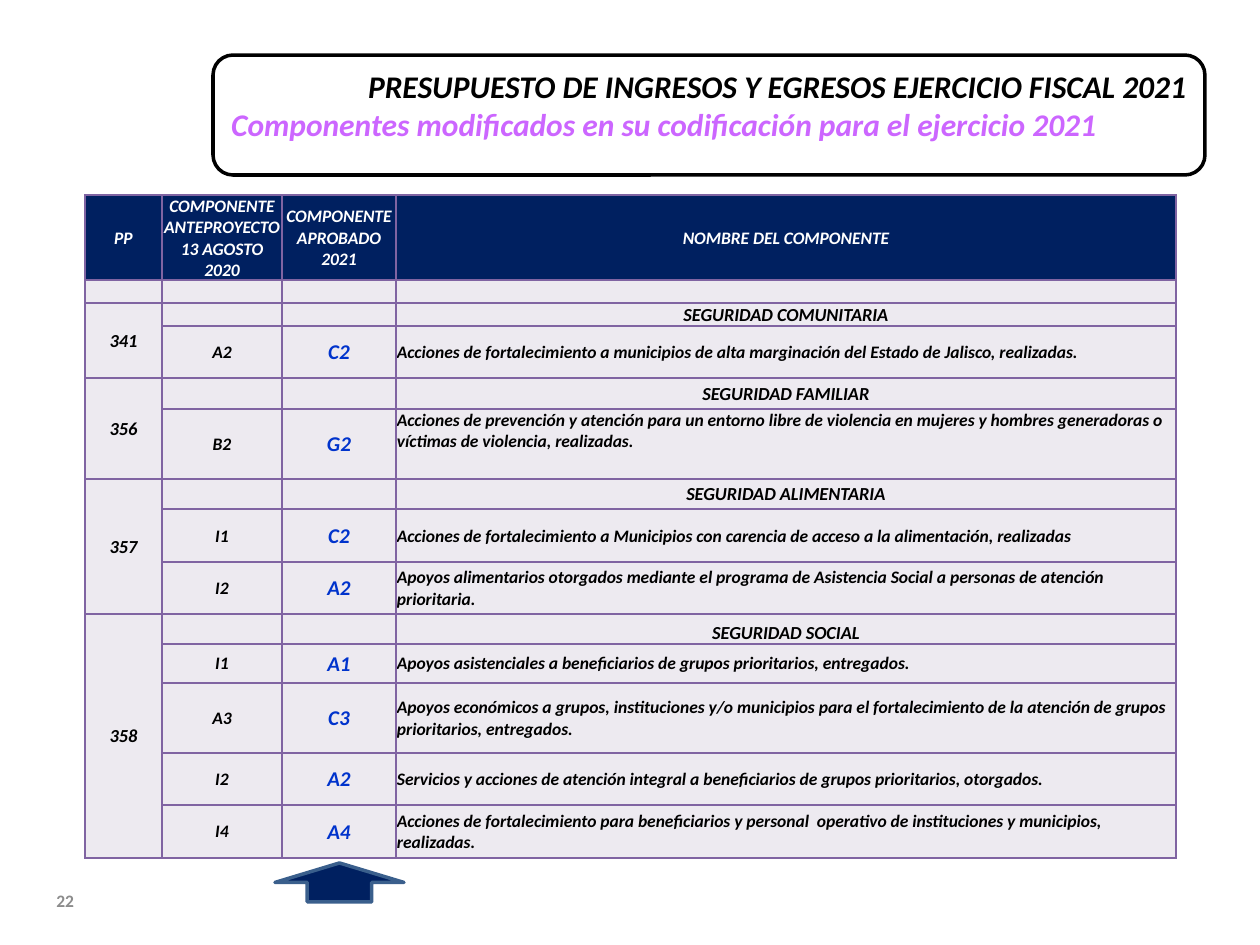
from dataclasses import dataclass

from lxml.etree import SubElement
from pptx import Presentation
from pptx.dml.color import RGBColor
from pptx.enum.shapes import MSO_SHAPE
from pptx.enum.text import MSO_ANCHOR, PP_ALIGN
from pptx.oxml.ns import qn
from pptx.util import Emu, Pt


@dataclass(frozen=True)
class Theme:
    font: str = "Calibri"
    navy: str = "002060"
    lilac: str = "EDEAF0"
    border: str = "8064A2"
    arrow_line: str = "3A5F8C"
    black: str = "000000"
    white: str = "FFFFFF"
    violet: str = "CC66FF"
    blue: str = "0033CC"
    gray: str = "8C8C8C"
    title_size: float = 18
    code_size: float = 12
    group_size: float = 10.5
    body_size: float = 10


def px(length):
    return Emu(round(length * 914400 / 126))


def rgb(value):
    return RGBColor.from_string(value)


class SlideBuilder:
    def __init__(self, page, theme):
        self.page = page
        self.theme = theme

    def style(self, para, size, color, align=PP_ALIGN.LEFT, italic=True):
        para.alignment = align
        for span in para.runs:
            font = span.font
            font.name, font.size = self.theme.font, Pt(size)
            font.bold, font.italic = True, italic
            font.color.rgb = rgb(color)

    def text(self, left, top, width, height, text, size, color):
        box = self.page.shapes.add_textbox(*map(px, (left, top, width, height)))
        frame = box.text_frame
        frame.word_wrap = True
        frame.vertical_anchor = MSO_ANCHOR.MIDDLE
        frame.text = text
        self.style(frame.paragraphs[0], size, color, italic=False)

    def shape(self, kind, left, top, width, height, line, fill=None):
        shape = self.page.shapes.add_shape(kind, *map(px, (left, top, width, height)))
        shape.shadow.inherit = False
        if fill:
            shape.fill.solid()
            shape.fill.fore_color.rgb = rgb(fill)
        else:
            shape.fill.background()
        shape.line.color.rgb = rgb(line)
        shape.line.width = Pt(2)
        return shape

    def title(self, left, top, width, height, lines):
        shape = self.shape(MSO_SHAPE.ROUNDED_RECTANGLE, left, top, width, height, self.theme.black)
        frame = shape.text_frame
        frame.word_wrap = True
        frame.vertical_anchor = MSO_ANCHOR.TOP
        frame.text = "\n".join(text for text, _, _ in lines)
        for para, (_, color, align) in zip(frame.paragraphs, lines):
            self.style(para, self.theme.title_size, color, align)

    def table(self, left, top, widths, heights):
        frame = self.page.shapes.add_table(
            len(heights), len(widths), px(left), px(top), px(sum(widths)), px(sum(heights)))
        table = frame.table
        table.first_row = table.horz_banding = False
        for column, width in zip(table.columns, widths):
            column.width = px(width)
        for row, height in zip(table.rows, heights):
            row.height = px(height)
            for cell in row.cells:
                self.plain_cell(cell)
        return table

    def plain_cell(self, cell):
        cell.margin_left = cell.margin_right = cell.margin_top = px(1)
        cell.margin_bottom = 0
        properties = cell._tc.get_or_add_tcPr()
        for side in ("lnL", "lnR", "lnT", "lnB"):
            line = SubElement(properties, qn(f"a:{side}"), w=str(Pt(1)))
            SubElement(SubElement(line, qn("a:solidFill")), qn("a:srgbClr"), val=self.theme.border)
        cell.fill.solid()
        cell.fill.fore_color.rgb = rgb(self.theme.lilac)
        # Keeps empty rows at their low height
        SubElement(cell.text_frame.paragraphs[0]._p, qn("a:endParaRPr"),
                   sz=str(int(self.theme.body_size * 100)))

    def cell(self, cell, text, size, color, align=PP_ALIGN.CENTER, anchor=MSO_ANCHOR.MIDDLE, fill=None):
        cell.text = text
        cell.vertical_anchor = anchor
        self.style(cell.text_frame.paragraphs[0], size, color, align)
        if fill:
            cell.fill.fore_color.rgb = rgb(fill)


HEADERS = ["PP", "COMPONENTE ANTEPROYECTO 13 AGOSTO 2020",
           "COMPONENTE APROBADO 2021", "NOMBRE DEL COMPONENTE"]
WIDTHS = [77, 120, 114, 780]
HEIGHTS = [85, 23, 22, 52, 31, 70, 30, 53, 52, 30, 39, 70, 52, 53]

# Program, area, anchor of the area, then (old code, new code, component, anchor)
MIDDLE, TOP, BOTTOM = MSO_ANCHOR.MIDDLE, MSO_ANCHOR.TOP, MSO_ANCHOR.BOTTOM
PROGRAMS = [
    ("341", "SEGURIDAD COMUNITARIA", MIDDLE, [
        ("A2", "C2", "Acciones de fortalecimiento a municipios de alta marginación del "
         "Estado de Jalisco, realizadas.", MIDDLE)]),
    ("356", "SEGURIDAD FAMILIAR", MIDDLE, [
        ("B2", "G2", "Acciones de prevención y atención para un entorno libre de violencia en "
         "mujeres y hombres generadoras o víctimas de violencia, realizadas.", TOP)]),
    ("357", "SEGURIDAD ALIMENTARIA", MIDDLE, [
        ("I1", "C2", "Acciones de fortalecimiento a Municipios con carencia de acceso a la "
         "alimentación, realizadas", MIDDLE),
        ("I2", "A2", "Apoyos alimentarios otorgados mediante el programa de Asistencia Social a "
         "personas de atención prioritaria.", MIDDLE)]),
    ("358", "SEGURIDAD SOCIAL", BOTTOM, [
        ("I1", "A1", "Apoyos asistenciales a beneficiarios de grupos prioritarios, entregados.", MIDDLE),
        ("A3", "C3", "Apoyos económicos a grupos, instituciones y/o municipios para el "
         "fortalecimiento de la atención de grupos prioritarios, entregados.", MIDDLE),
        ("I2", "A2", "Servicios y acciones de atención integral a beneficiarios de grupos "
         "prioritarios, otorgados.", MIDDLE),
        ("I4", "A4", "Acciones de fortalecimiento para beneficiarios y personal  operativo de "
         "instituciones y municipios, realizadas.", MIDDLE)]),
]


def main():
    deck = Presentation()
    deck.slide_width, deck.slide_height = px(1260), px(945)
    theme = Theme()
    builder = SlideBuilder(deck.slides.add_slide(deck.slide_layouts[6]), theme)

    # Page number and title
    builder.text(44, 876, 294, 50, "22", theme.body_size, theme.gray)
    builder.title(213, 55, 992, 120, [
        ("PRESUPUESTO DE INGRESOS Y EGRESOS EJERCICIO FISCAL 2021", theme.black, PP_ALIGN.RIGHT),
        ("Componentes modificados en su codificación para el ejercicio 2021",
         theme.violet, PP_ALIGN.JUSTIFY)])

    # Table header
    table = builder.table(85, 195, WIDTHS, HEIGHTS)
    for column, text in enumerate(HEADERS):
        builder.cell(table.cell(0, column), text, theme.body_size, theme.white, fill=theme.navy)

    # Programs, each with an area row above its components
    row = 2
    for program, area, area_anchor, components in PROGRAMS:
        last = row + len(components)
        table.cell(row, 0).merge(table.cell(last, 0))
        builder.cell(table.cell(row, 0), program, theme.group_size, theme.black)
        builder.cell(table.cell(row, 3), area, theme.group_size, theme.black, anchor=area_anchor)
        for line, (old, new, name, anchor) in enumerate(components, row + 1):
            builder.cell(table.cell(line, 1), old, theme.body_size, theme.black)
            builder.cell(table.cell(line, 2), new, theme.code_size, theme.blue)
            builder.cell(table.cell(line, 3), name, theme.body_size, theme.black,
                         PP_ALIGN.LEFT, anchor)
        row = last + 1

    # Arrow under the approved codes
    builder.shape(MSO_SHAPE.UP_ARROW, 275, 863, 129, 39, theme.arrow_line, theme.navy)

    deck.save("out.pptx")


if __name__ == "__main__":
    main()
